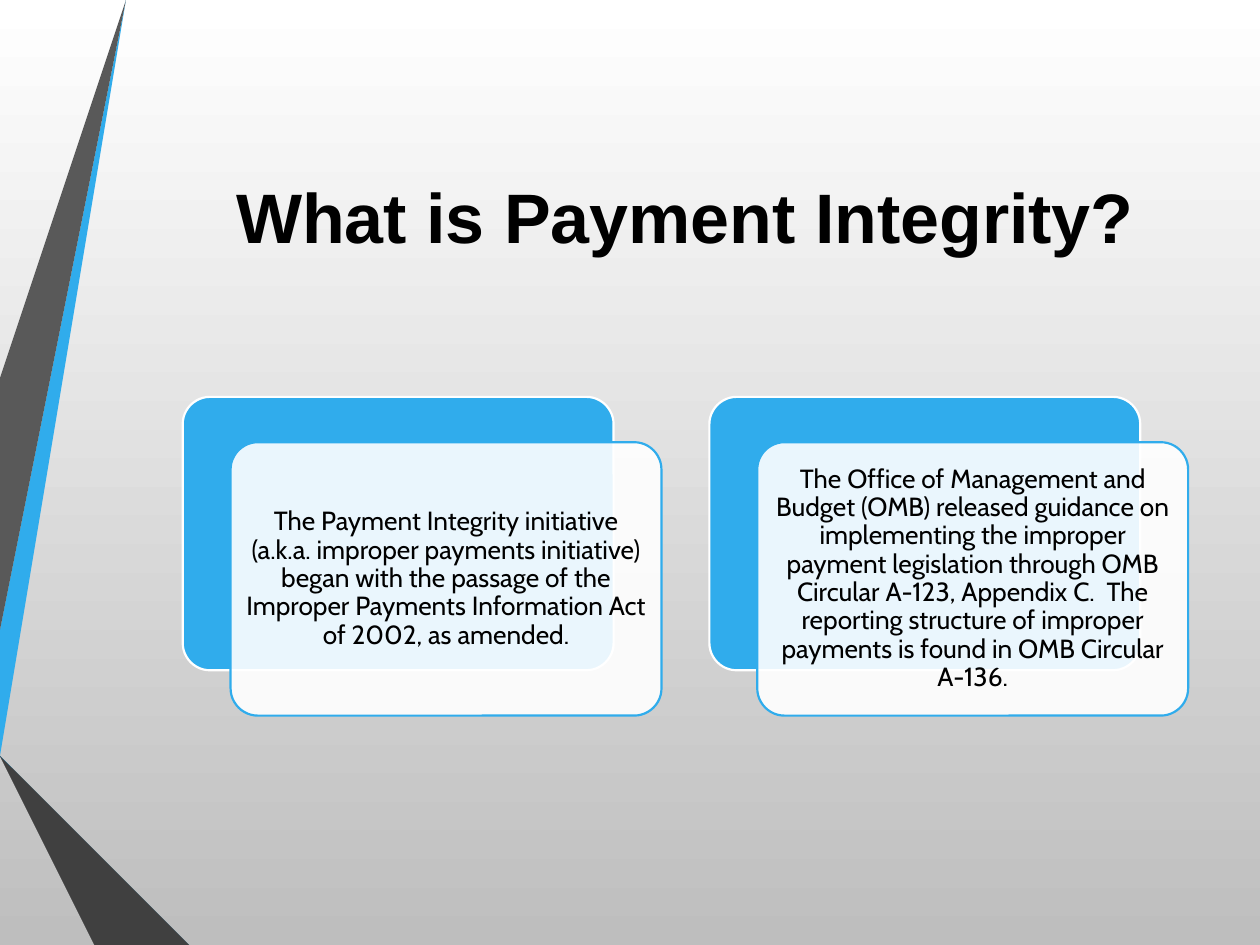
from pptx import Presentation
from pptx.dml.color import RGBColor
from pptx.enum.shapes import MSO_SHAPE as SHAPE
from pptx.enum.text import MSO_ANCHOR as ANCHOR, PP_ALIGN as ALIGN
from pptx.oxml.ns import qn
from pptx.util import Inches, Pt
from lxml.etree import SubElement


def color(value):
    return RGBColor.from_string(value)


def write(box, text, font, size, bold=False):
    frame = box.text_frame
    frame.word_wrap = True
    frame.vertical_anchor = ANCHOR.MIDDLE
    frame.text = text
    para = frame.paragraphs[0]
    para.alignment = ALIGN.CENTER
    span = para.runs[0].font
    span.name, span.size, span.bold = font, Pt(size), bold
    span.color.rgb = color("000000")
    return frame


deck = Presentation()
deck.slide_width, deck.slide_height = Inches(10), Inches(7.5)
page = deck.slides.add_slide(deck.slide_layouts[6])

# Background: white fading to grey at the bottom
backdrop = page.background.fill
backdrop.gradient()
backdrop.gradient_angle = 270
for stop, (position, shade) in zip(backdrop.gradient_stops, [(0, "FFFFFF"), (1, "BEBEBE")]):
    stop.position = position
    stop.color.rgb = color(shade)

# Folded ribbons down the left edge
ribbons = [
    ("30ACEC", [(0, 5.44), (0, 5.75), (0.22, 5.79), (1.17, 0), (0.89, 0)]),
    ("595959", [(0.83, 0), (0.55, 0), (0, 3.36), (0, 5.06)]),
    ("262626", [(0, 6.19), (0, 6.21), (0.93, 7.5), (0.99, 7.5)]),
    ("0C5A82", [(0, 5.79), (0, 5.8), (1.56, 7.5), (1.63, 7.5)]),
    ("1287C3", [(0, 5.79), (1.63, 7.5), (2.33, 7.5), (0.22, 5.79), (0, 5.75)]),
    ("404040", [(0, 6.19), (0.99, 7.5), (1.51, 7.5), (0, 5.86)]),
]
for fill, points in ribbons:
    builder = page.shapes.build_freeform(*points[0], scale=Inches(1))
    builder.add_line_segments(points[1:], close=True)
    ribbon = builder.convert_to_shape()
    ribbon.shadow.inherit = False
    ribbon.fill.solid()
    ribbon.fill.fore_color.rgb = color(fill)
    ribbon.line.fill.background()

# Title
title = page.shapes.add_textbox(Inches(1.44), Inches(0.75), Inches(7.99), Inches(1.92))
write(title, "What is Payment Integrity?", "Arial", 40, bold=True)

# Two columns, each a blue panel with a translucent card offset over it
LEFT, TOP, COLUMN = 1.45, 3.15, 4.18
CARD_W, CARD_H = 3.42, 2.17
SHIFT_X, SHIFT_Y = 0.38, 0.36
statements = [
    "The Payment Integrity initiative (a.k.a. improper payments initiative) began with "
    "the passage of the Improper Payments Information Act of 2002, as amended.",
    "The Office of Management and Budget (OMB) released guidance on implementing the "
    "improper payment legislation through OMB Circular A-123, Appendix C.  The reporting "
    "structure of improper payments is found in OMB Circular A-136.",
]
for column, statement in enumerate(statements):
    for layer, (fill, outline) in enumerate([("30ACEC", "FFFFFF"), ("FFFFFF", "30ACEC")]):
        card = page.shapes.add_shape(
            SHAPE.ROUNDED_RECTANGLE,
            Inches(LEFT + column * COLUMN + layer * SHIFT_X), Inches(TOP + layer * SHIFT_Y),
            Inches(CARD_W), Inches(CARD_H))
        card.adjustments[0] = 0.1
        card.shadow.inherit = False
        card.fill.solid()
        card.fill.fore_color.rgb = color(fill)
        card.line.color.rgb = color(outline)
        card.line.width = Pt(1.25)

    # The front card is 90% opaque and holds the text
    tint = card._element.spPr.find(qn("a:solidFill")).find(qn("a:srgbClr"))
    SubElement(tint, qn("a:alpha")).set("val", "90000")
    frame = write(card, statement, "Cabin", 15)
    frame.margin_left = frame.margin_right = Inches(0.06)
    frame.margin_top = frame.margin_bottom = Inches(0.06)
    frame.paragraphs[0].line_spacing = 0.9

deck.save("out.pptx")
